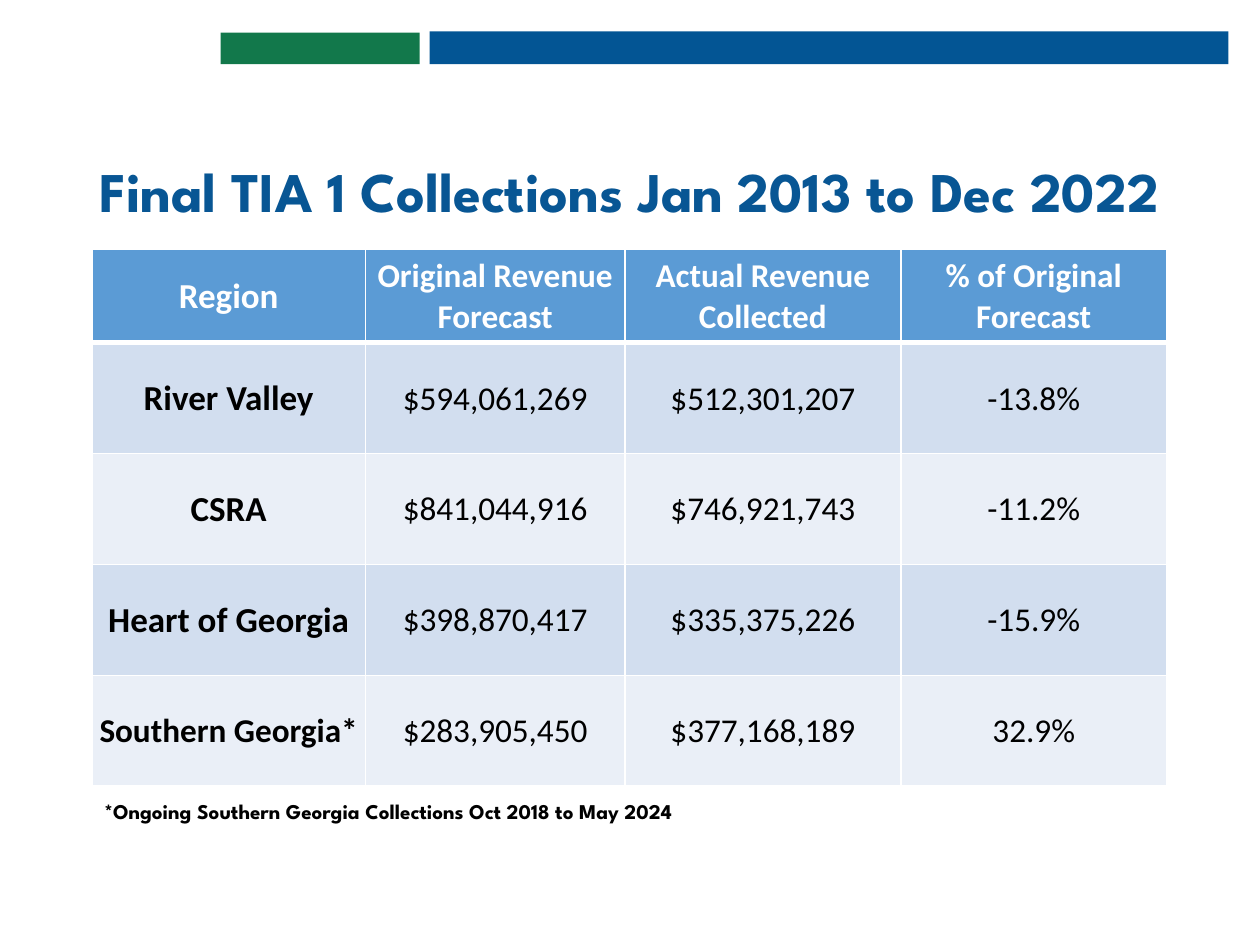
from dataclasses import dataclass

from lxml.etree import SubElement
from pptx import Presentation
from pptx.dml.color import RGBColor
from pptx.enum.shapes import MSO_SHAPE as Preset
from pptx.enum.text import MSO_ANCHOR as Anchor, PP_ALIGN as Align
from pptx.oxml.ns import qn
from pptx.util import Inches, Pt


@dataclass(frozen=True)
class Theme:
    heading_font: str = "League Spartan"
    body_font: str = "Calibri"
    blue: str = "035594"
    green: str = "12784B"
    title: str = "085694"
    header: str = "5B9BD5"
    bands: tuple = ("D2DEEF", "EAEFF7")
    white: str = "FFFFFF"
    black: str = "000000"
    title_size: int = 32
    label_size: int = 20
    value_size: int = 19
    note_size: int = 12


def write_text(frame, text, *, font, size, color, bold=True, align=Align.CENTER, spacing=None):
    paragraph = frame.paragraphs[0]
    paragraph.alignment = align
    paragraph.line_spacing = spacing
    run = paragraph.add_run()
    run.text = text
    run.font.name = font
    run.font.size = Pt(size)
    run.font.bold = bold
    run.font.color.rgb = RGBColor.from_string(color)


class SlideBuilder:
    def __init__(self, slide, theme):
        self.slide = slide
        self.theme = theme

    def bar(self, left, top, width, height, color):
        shape = self.slide.shapes.add_shape(
            Preset.RECTANGLE, Inches(left), Inches(top), Inches(width), Inches(height))
        shape.shadow.inherit = False
        shape.fill.solid()
        shape.fill.fore_color.rgb = RGBColor.from_string(color)
        shape.line.fill.background()

    def text(self, left, top, width, height, text, **style):
        box = self.slide.shapes.add_textbox(
            Inches(left), Inches(top), Inches(width), Inches(height))
        frame = box.text_frame
        frame.word_wrap = True
        frame.vertical_anchor = Anchor.BOTTOM
        write_text(frame, text, font=self.theme.heading_font, spacing=0.9, **style)

    def border(self, cell, bottom_width):
        properties = cell._tc.get_or_add_tcPr()
        widths = {"a:lnL": 1, "a:lnR": 1, "a:lnT": 1, "a:lnB": bottom_width}
        for index, (tag, width) in enumerate(widths.items()):
            line = SubElement(properties, qn(tag), w=str(Pt(width)))
            fill = SubElement(line, qn("a:solidFill"))
            SubElement(fill, qn("a:srgbClr"), val=self.theme.white)
            properties.insert(index, line)

    def cell(self, cell, text, fill, bottom_width=1, **style):
        cell.margin_left = cell.margin_right = cell.margin_top = Inches(0.01)
        cell.margin_bottom = 0
        cell.vertical_anchor = Anchor.MIDDLE
        cell.fill.solid()
        cell.fill.fore_color.rgb = RGBColor.from_string(fill)
        self.border(cell, bottom_width)
        write_text(cell.text_frame, text, font=self.theme.body_font, **style)

    def table(self, left, top, widths, heights, rows):
        theme = self.theme
        table = self.slide.shapes.add_table(
            len(rows), len(widths), Inches(left), Inches(top),
            Inches(sum(widths)), Inches(sum(heights))).table
        for column, width in zip(table.columns, widths):
            column.width = Inches(width)
        for row, height in zip(table.rows, heights):
            row.height = Inches(height)
        last = len(rows) - 1
        for i, values in enumerate(rows):
            is_header = i == 0
            for j, value in enumerate(values):
                is_label = j == 0
                self.cell(
                    table.cell(i, j), value,
                    fill=theme.header if is_header else theme.bands[(i - 1) % 2],
                    bottom_width=3 if is_header else 1,
                    size=theme.label_size if is_label and i < last else theme.value_size,
                    color=theme.white if is_header else theme.black,
                    bold=is_header or is_label)


COLLECTIONS = [
    ("Region", "Original Revenue Forecast", "Actual Revenue Collected", "% of Original Forecast"),
    ("River Valley", "$594,061,269", "$512,301,207", "-13.8%"),
    ("CSRA", "$841,044,916", "$746,921,743", "-11.2%"),
    ("Heart of Georgia", "$398,870,417", "$335,375,226", "-15.9%"),
    ("Southern Georgia*", "$283,905,450", "$377,168,189", "32.9%"),
]


def main():
    presentation = Presentation()
    presentation.slide_width = Inches(10)
    presentation.slide_height = Inches(7.5)
    theme = Theme()
    builder = SlideBuilder(presentation.slides.add_slide(presentation.slide_layouts[6]), theme)

    builder.bar(3.41, 0.25, 6.34, 0.26, theme.blue)
    builder.bar(1.75, 0.26, 1.58, 0.25, theme.green)
    builder.text(0, 1.2, 10, 0.63, "Final TIA 1 Collections Jan 2013 to Dec 2022",
                 size=theme.title_size, color=theme.title)
    builder.table(0.73, 1.98, [2.17, 2.06, 2.19, 2.11], [0.74] + [0.88] * 4, COLLECTIONS)
    builder.text(0.73, 6.23, 6.21, 0.36,
                 "*Ongoing Southern Georgia Collections Oct 2018 to May 2024",
                 size=theme.note_size, color=theme.black, align=Align.LEFT)
    presentation.save("out.pptx")


if __name__ == "__main__":
    main()
